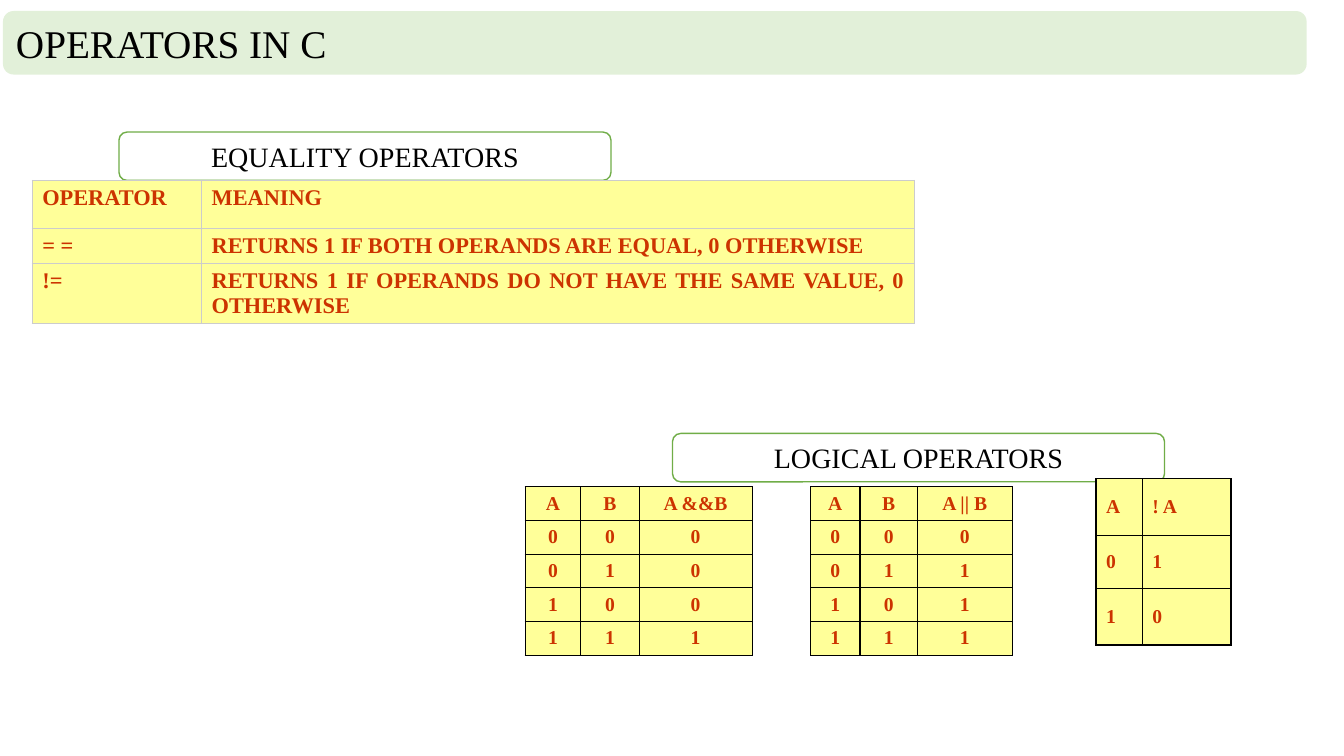
from dataclasses import dataclass

from lxml.etree import SubElement
from pptx import Presentation
from pptx.dml.color import RGBColor
from pptx.enum.shapes import MSO_SHAPE
from pptx.enum.text import MSO_ANCHOR, PP_ALIGN
from pptx.oxml.ns import qn
from pptx.util import Inches, Pt


@dataclass(frozen=True)
class Theme:
    font: str = "Times New Roman"
    title_size: int = 28
    heading_size: int = 20
    meaning_size: int = 16
    truth_size: int = 14
    ink: str = "000000"
    title_fill: str = "E2F0D9"
    heading_line: str = "70AD47"
    cell_fill: str = "FFFF99"
    cell_ink: str = "CC3300"
    pale_border: str = "CCCCCC"
    dark_border: str = "000000"


theme = Theme()


def write_text(text_frame, text, size, color, align, bold=False):
    text_frame.text = text
    para = text_frame.paragraphs[0]
    para.alignment = align
    for span in para.runs:
        span.font.name = theme.font
        span.font.size = Pt(size)
        span.font.bold = bold
        span.font.color.rgb = RGBColor.from_string(color)


def draw_borders(cell, color):
    """Give the cell a 1 pt line on all four sides; call before filling it."""
    properties = cell._tc.get_or_add_tcPr()
    for side in ("lnL", "lnR", "lnT", "lnB"):
        line = SubElement(properties, qn(f"a:{side}"), w=str(Pt(1)))
        fill = SubElement(line, qn("a:solidFill"))
        SubElement(fill, qn("a:srgbClr"), val=color)


deck = Presentation()
deck.slide_width = Inches(13.33)
deck.slide_height = Inches(7.5)
page = deck.slides.add_slide(deck.slide_layouts[6])

# Title bar and section headings: text, left, top, width, height, size, align, fill, line
boxes = [
    ("OPERATORS IN C", 0.03, 0.11, 12.93, 0.63, theme.title_size,
     PP_ALIGN.LEFT, theme.title_fill, None),
    ("EQUALITY OPERATORS", 1.18, 1.31, 4.88, 0.48, theme.heading_size,
     PP_ALIGN.CENTER, None, theme.heading_line),
    ("LOGICAL OPERATORS", 6.67, 4.3, 4.88, 0.48, theme.heading_size,
     PP_ALIGN.CENTER, None, theme.heading_line),
]
for text, left, top, width, height, size, align, fill, line in boxes:
    box = page.shapes.add_shape(
        MSO_SHAPE.FLOWCHART_ALTERNATE_PROCESS,
        Inches(left), Inches(top), Inches(width), Inches(height))
    box.shadow.inherit = False
    if fill:
        box.fill.solid()
        box.fill.fore_color.rgb = RGBColor.from_string(fill)
    else:
        box.fill.background()
    if line:
        box.line.color.rgb = RGBColor.from_string(line)
        box.line.width = Pt(1)
    else:
        box.line.fill.background()
    box.text_frame.word_wrap = True
    box.text_frame.vertical_anchor = MSO_ANCHOR.MIDDLE
    write_text(box.text_frame, text, size, theme.ink, align)

# Tables: left, top, column widths, row heights, size, align, anchor, border, rows
equality_rows = [
    ("OPERATOR", "MEANING"),
    ("= =", "RETURNS 1 IF BOTH OPERANDS ARE EQUAL, 0 OTHERWISE"),
    ("!=", "RETURNS 1 IF OPERANDS DO NOT HAVE THE SAME VALUE, 0 OTHERWISE"),
]
inputs = [(a, b) for a in (0, 1) for b in (0, 1)]
and_rows = [("A", "B", "A &&B")] + [(a, b, a & b) for a, b in inputs]
or_rows = [("A", "B", "A || B")] + [(a, b, a | b) for a, b in inputs]
not_rows = [("A", "! A")] + [(a, 1 - a) for a in (0, 1)]

tables = [
    (0.32, 1.79, (1.68, 7.07), (0.48, 0.3, 0.3), theme.meaning_size,
     PP_ALIGN.JUSTIFY, MSO_ANCHOR.TOP, theme.pale_border, equality_rows),
    (5.21, 4.83, (0.55, 0.58, 1.12), [1.67 / 5] * 5, theme.truth_size,
     PP_ALIGN.CENTER, MSO_ANCHOR.MIDDLE, theme.dark_border, and_rows),
    (8.04, 4.83, (0.49, 0.57, 0.94), [1.67 / 5] * 5, theme.truth_size,
     PP_ALIGN.CENTER, MSO_ANCHOR.MIDDLE, theme.dark_border, or_rows),
    (10.87, 4.75, (0.46, 0.88), (0.56, 0.53, 0.56), theme.truth_size,
     PP_ALIGN.JUSTIFY, MSO_ANCHOR.MIDDLE, theme.dark_border, not_rows),
]
for left, top, widths, heights, size, align, anchor, border, rows in tables:
    table = page.shapes.add_table(
        len(heights), len(widths), Inches(left), Inches(top),
        Inches(sum(widths)), Inches(sum(heights))).table
    table.first_row = False
    table.horz_banding = False
    for column, width in zip(table.columns, widths):
        column.width = Inches(width)
    for row, height, values in zip(table.rows, heights, rows):
        row.height = Inches(height)
        for cell, value in zip(row.cells, values):
            draw_borders(cell, border)
            cell.fill.solid()
            cell.fill.fore_color.rgb = RGBColor.from_string(theme.cell_fill)
            cell.vertical_anchor = anchor
            write_text(cell.text_frame, str(value), size, theme.cell_ink, align, bold=True)

deck.save("out.pptx")
